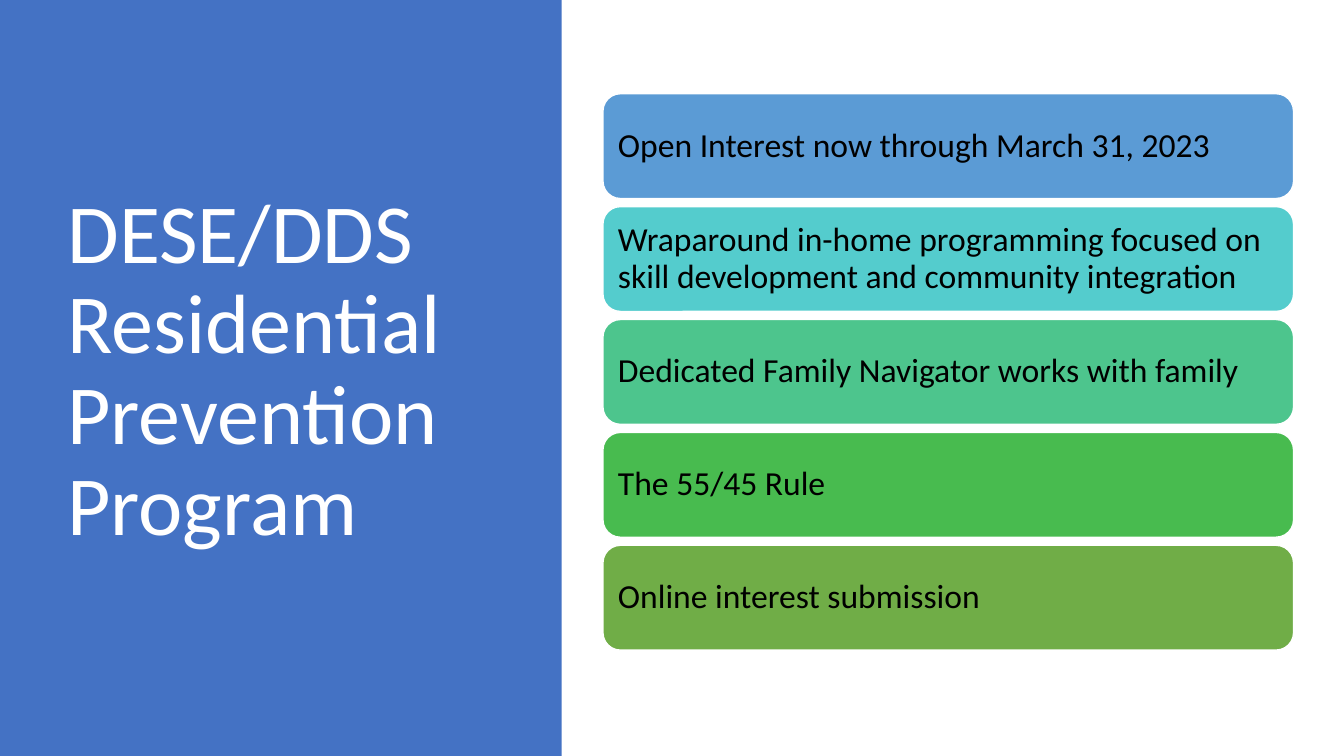
from dataclasses import dataclass

import pptx
import pptx.dml.color
import pptx.enum.shapes
import pptx.enum.text
import pptx.util


@dataclass(frozen=True)
class Theme:
    font: str = "Calibri"
    title_size: int = 60
    card_size: int = 24
    line_spacing: float = 0.9
    panel: str = "4472C4"
    light: str = "FFFFFF"
    dark: str = "000000"


THEME = Theme()
WIDTH, HEIGHT = 13.33, 7.5
PANEL_WIDTH = 5.57
CARD_LEFT, CARD_TOP = 5.98, 0.93
CARD_WIDTH, CARD_HEIGHT = 6.85, 1.04
CARD_GAP = 0.08
CARDS = [
    ("Open Interest now through March 31, 2023", "5B9BD5"),
    ("Wraparound in-home programming focused on skill development "
     "and community integration", "54CCCD"),
    ("Dedicated Family Navigator works with family", "4DC58D"),
    ("The 55/45 Rule", "48BB4F"),
    ("Online interest submission", "70AD47"),
]


def inches(*lengths):
    return [pptx.util.Inches(length) for length in lengths]


def rgb(color):
    return pptx.dml.color.RGBColor.from_string(color)


def add_filled(s, kind, box, fill, line=None):
    sp = s.shapes.add_shape(kind, *inches(*box))
    sp.shadow.inherit = False
    sp.fill.solid()
    sp.fill.fore_color.rgb = rgb(fill)
    if line:
        sp.line.color.rgb = rgb(line)
        sp.line.width = pptx.util.Pt(1)
    else:
        sp.line.fill.background()
    return sp


def write(sp, text, size, color, inset_y):
    tf = sp.text_frame
    tf.word_wrap = True
    tf.vertical_anchor = pptx.enum.text.MSO_ANCHOR.MIDDLE
    tf.margin_left = tf.margin_right = pptx.util.Inches(0.1)
    tf.margin_top = tf.margin_bottom = pptx.util.Inches(inset_y)
    p = tf.paragraphs[0]
    p.alignment = pptx.enum.text.PP_ALIGN.LEFT
    p.line_spacing = THEME.line_spacing
    r = p.add_run()
    r.text = text
    r.font.name = THEME.font
    r.font.size = pptx.util.Pt(size)
    r.font.color.rgb = rgb(color)


def add_title(s, text, box):
    sp = s.shapes.add_textbox(*inches(*box))
    write(sp, text, THEME.title_size, THEME.light, 0.05)


def add_card(s, row, text, fill):
    top = CARD_TOP + row * (CARD_HEIGHT + CARD_GAP)
    sp = add_filled(s, pptx.enum.shapes.MSO_SHAPE.ROUNDED_RECTANGLE,
                    (CARD_LEFT, top, CARD_WIDTH, CARD_HEIGHT), fill, THEME.light)
    write(sp, text, THEME.card_size, THEME.dark, 0.1)


def main():
    prs = pptx.Presentation()
    prs.slide_width, prs.slide_height = inches(WIDTH, HEIGHT)
    s = prs.slides.add_slide(prs.slide_layouts[6])
    add_filled(s, pptx.enum.shapes.MSO_SHAPE.RECTANGLE,
               (0, 0, PANEL_WIDTH, HEIGHT), THEME.panel)
    add_title(s, "DESE/DDS Residential Prevention Program", (0.57, 0.68, 4.16, 6.02))
    for row, (text, fill) in enumerate(CARDS):
        add_card(s, row, text, fill)
    prs.save("out.pptx")


if __name__ == "__main__":
    main()
